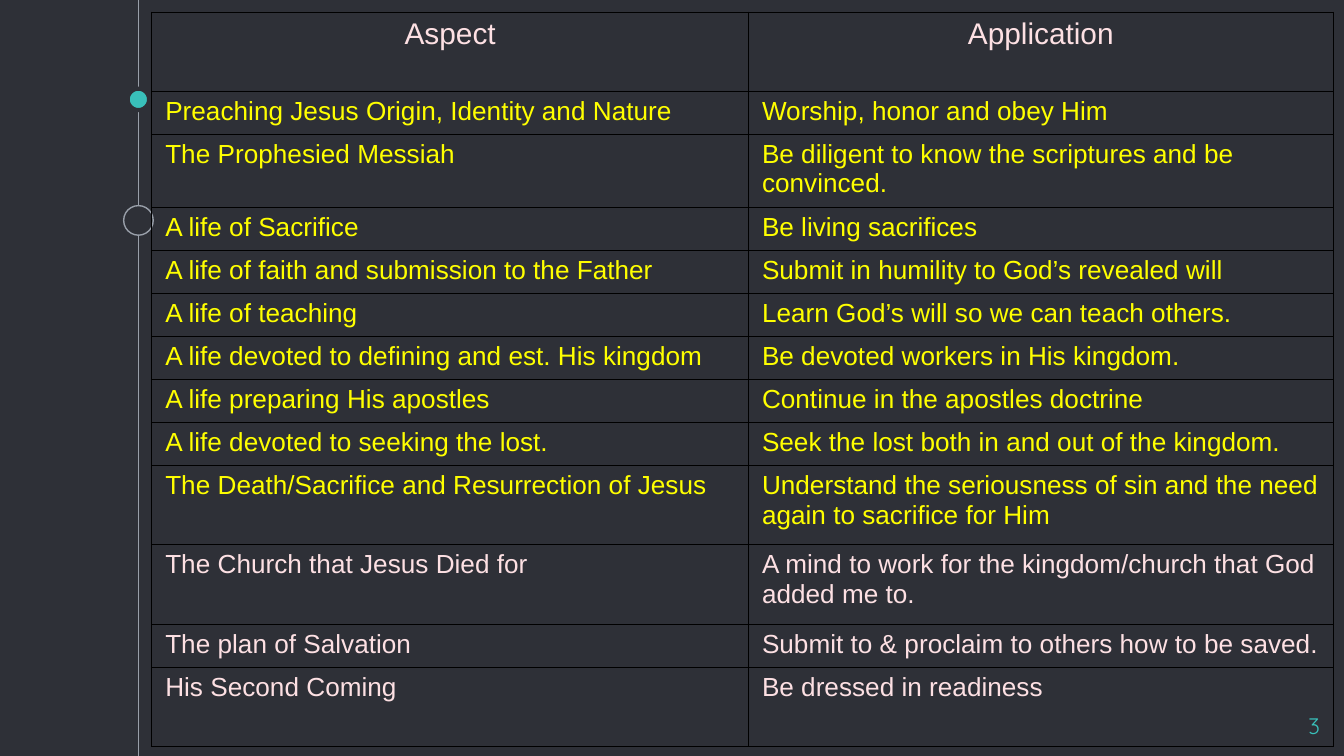
from pptx import Presentation
from pptx.dml.color import RGBColor
from pptx.enum import shapes, text
from pptx.oxml import parse_xml
from pptx.oxml.ns import nsdecls
from pptx.util import Inches, Pt

DARK, GREY, TEAL = "2E3037", "999FA9", "39C0BA"
PINK, YELLOW, BLACK = "FDE0E3", "FFFF00", "000000"
AXIS_X = 1.03
COLUMN_WIDTHS = (4.44, 4.35)

LESSONS = [
    ("Aspect", "Application", 0.59, PINK),
    ("Preaching Jesus Origin, Identity and Nature", "Worship, honor and obey Him", 0.32, YELLOW),
    ("The Prophesied Messiah", "Be diligent to know the scriptures and be convinced.", 0.54, YELLOW),
    ("A life of Sacrifice", "Be living sacrifices", 0.32, YELLOW),
    ("A life of faith and submission to the Father", "Submit in humility to God’s revealed will", 0.32, YELLOW),
    ("A life of teaching", "Learn God’s will so we can teach others.", 0.32, YELLOW),
    ("A life devoted to defining and est. His kingdom", "Be devoted workers in His kingdom.", 0.32, YELLOW),
    ("A life preparing His apostles", "Continue in the apostles doctrine", 0.32, YELLOW),
    ("A life devoted to seeking the lost.", "Seek the lost both in and out of the kingdom.", 0.32, YELLOW),
    ("The Death/Sacrifice and Resurrection of Jesus",
     "Understand the seriousness of sin and the need again to sacrifice for Him", 0.59, YELLOW),
    ("The Church that Jesus Died for",
     "A mind to work for the kingdom/church that God added me to.", 0.59, PINK),
    ("The plan of Salvation", "Submit to & proclaim to others how to be saved.", 0.32, PINK),
    ("His Second Coming", "Be dressed in readiness", 0.59, PINK),
]


def rgb(value):
    """Turn a hex string into a colour."""
    return RGBColor.from_string(value)


def set_font(paragraph, name, size, color):
    """Set the font of a whole paragraph."""
    paragraph.font.name = name
    paragraph.font.size = Pt(size)
    paragraph.font.color.rgb = rgb(color)


def add_axis(slide, height):
    """Draw the vertical timeline from top to bottom."""
    axis = slide.shapes.add_connector(
        shapes.MSO_CONNECTOR.STRAIGHT, Inches(AXIS_X), 0, Inches(AXIS_X), height)
    axis.line.color.rgb = rgb(GREY)
    axis.line.width = Pt(0.75)
    axis._element.spPr.append(parse_xml(f"<a:effectLst {nsdecls('a')}/>"))


def add_marker(slide, middle, diameter, fill, outline, width):
    """Draw a round marker centred on the timeline."""
    marker = slide.shapes.add_shape(
        shapes.MSO_SHAPE.OVAL, Inches(AXIS_X - diameter / 2),
        Inches(middle - diameter / 2), Inches(diameter), Inches(diameter))
    marker.shadow.inherit = False
    marker.fill.solid()
    marker.fill.fore_color.rgb = rgb(fill)
    marker.line.color.rgb = rgb(outline)
    marker.line.width = Pt(width)


def add_page_number(slide, number):
    """Write the page number at the bottom right."""
    box = slide.shapes.add_textbox(Inches(9.32), Inches(5.2), Inches(0.6), Inches(0.34))
    frame = box.text_frame
    frame.word_wrap = True
    frame.margin_left = frame.margin_right = Inches(0.1)
    frame.margin_top = frame.margin_bottom = Inches(0.1)
    paragraph = frame.paragraphs[0]
    paragraph.text = number
    paragraph.alignment = text.PP_ALIGN.RIGHT
    set_font(paragraph, "Quicksand", 12, TEAL)


def add_borders(cell):
    """Give a cell thin black borders on all sides."""
    properties = cell._tc.get_or_add_tcPr()
    for position, side in enumerate(("lnL", "lnR", "lnT", "lnB")):
        properties.insert(position, parse_xml(
            f'<a:{side} {nsdecls("a")} w="{Pt(0.75)}"><a:solidFill>'
            f'<a:srgbClr val="{BLACK}"/></a:solidFill></a:{side}>'))


def fill_cell(cell, words, color, is_header):
    """Write and style one table cell."""
    cell.fill.background()
    cell.margin_top = cell.margin_bottom = Inches(0.04)
    add_borders(cell)
    paragraph = cell.text_frame.paragraphs[0]
    paragraph.text = words
    paragraph.alignment = text.PP_ALIGN.CENTER if is_header else text.PP_ALIGN.LEFT
    set_font(paragraph, "Arial", 16 if is_header else 14, color)


def add_lessons(slide):
    """Build the table of aspects and applications."""
    total_height = sum(lesson[2] for lesson in LESSONS)
    table = slide.shapes.add_table(
        len(LESSONS), len(COLUMN_WIDTHS), Inches(1.13), Inches(0.09),
        Inches(sum(COLUMN_WIDTHS)), Inches(total_height)).table
    table.first_row = table.horz_banding = False
    for column, width in zip(table.columns, COLUMN_WIDTHS):
        column.width = Inches(width)
    for index, (aspect, application, height, color) in enumerate(LESSONS):
        table.rows[index].height = Inches(height)
        for column, words in enumerate((aspect, application)):
            fill_cell(table.cell(index, column), words, color, index == 0)


def main():
    """Build and save the slide."""
    deck = Presentation()
    deck.slide_width = Inches(10)
    deck.slide_height = deck.slide_width * 9 // 16
    slide = deck.slides.add_slide(deck.slide_layouts[6])
    slide.background.fill.solid()
    slide.background.fill.fore_color.rgb = rgb(DARK)
    add_axis(slide, deck.slide_height)
    add_marker(slide, 0.74, 0.16, TEAL, DARK, 2.25)
    add_marker(slide, 1.64, 0.22, DARK, GREY, 0.75)
    add_page_number(slide, "3")
    add_lessons(slide)
    deck.save("out.pptx")


if __name__ == "__main__":
    main()
